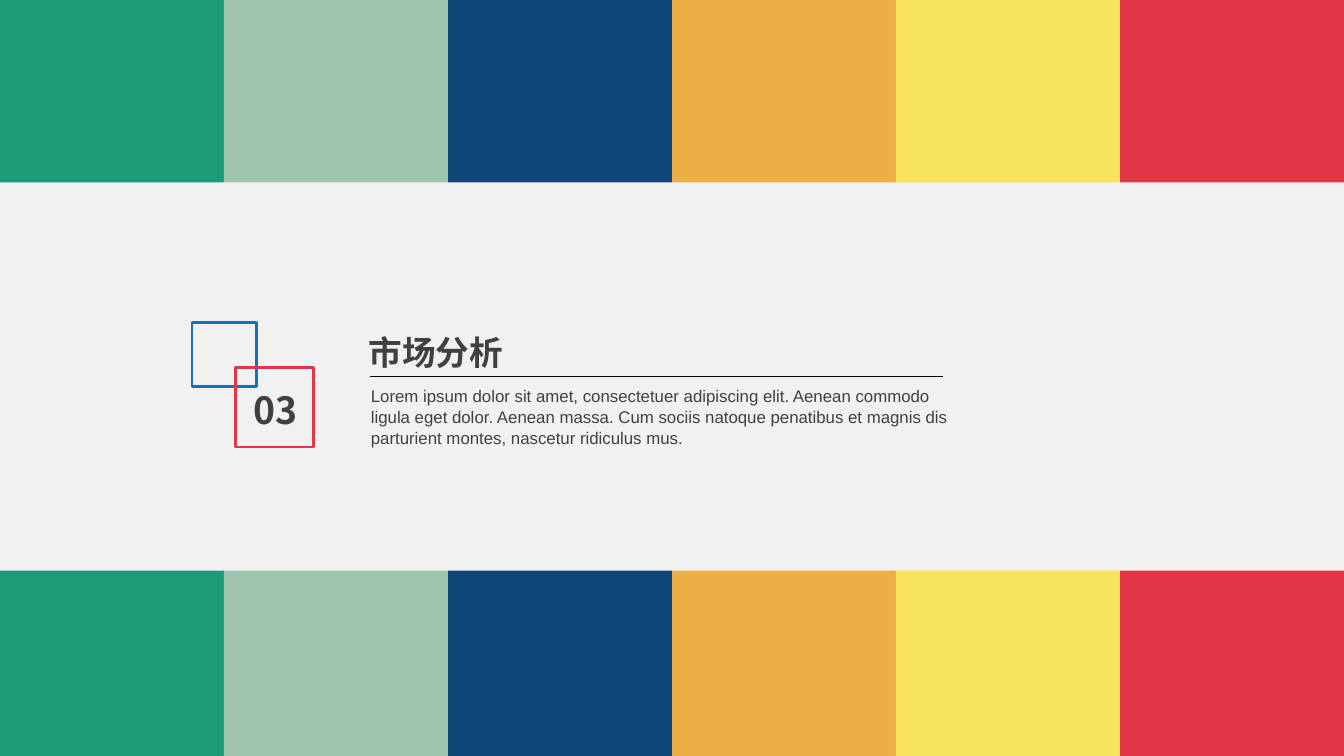
"""Build the section slide for part 03, market analysis."""
import pptx
import pptx.dml.color
import pptx.enum.shapes
import pptx.enum.text
import pptx.oxml.ns
import pptx.util
from lxml import etree

Cm = pptx.util.Cm
Pt = pptx.util.Pt

WIDTH, HEIGHT = 25.4, 14.29
STRIPES = ["1B9C77", "9CC4AE", "0D4677", "ECAF45", "F8E45E", "E03646"]
PAPER, INK = "F1F1F1", "404040"
BAND = (-0.08, 3.45, 25.48, 7.34)
FRAMES = [("1571BD", (3.63, 6.09, 1.22, 1.22)), ("E03646", (4.45, 6.95, 1.48, 1.5))]
RULE = (7.0, 7.11, 17.83)
HEADING = ("市场分析", (6.71, 6.15, 3.1, 1.02))
NUMBER = ("03", (4.55, 7.19, 1.4, 1.12))
BODY = (
    "Lorem ipsum dolor sit amet, consectetuer adipiscing elit. Aenean commodo "
    "ligula eget dolor. Aenean massa. Cum sociis natoque penatibus et magnis dis "
    "parturient montes, nascetur ridiculus mus.",
    (6.76, 7.16, 11.76, 1.42),
)


def color(value):
    return pptx.dml.color.RGBColor.from_string(value)


def lengths(place):
    return [Cm(value) for value in place]


def add_rectangle(page, place, fill=None, line=None):
    box = page.shapes.add_shape(pptx.enum.shapes.MSO_SHAPE.RECTANGLE, *lengths(place))
    box.shadow.inherit = False
    if fill:
        box.fill.solid()
        box.fill.fore_color.rgb = color(fill)
    else:
        box.fill.background()
    if line:
        box.line.color.rgb = color(line)
        box.line.width = Pt(1.5)
    else:
        box.line.fill.background()


def write(box, text, place, size, font, bold=False, wrap=False):
    box.left, box.top, box.width, box.height = lengths(place)
    frame = box.text_frame
    frame.text = text
    frame.word_wrap = wrap
    frame.auto_size = pptx.enum.text.MSO_AUTO_SIZE.NONE
    frame.vertical_anchor = pptx.enum.text.MSO_ANCHOR.MIDDLE
    para = frame.paragraphs[0]
    para.alignment = pptx.enum.text.PP_ALIGN.LEFT
    para.font.name = font
    para.font.size = Pt(size)
    para.font.bold = bold
    para.font.color.rgb = color(INK)
    span = para.runs[0]
    span.font.name = font
    east_asian = etree.SubElement(span.font._element, pptx.oxml.ns.qn("a:ea"))
    east_asian.set("typeface", font)
    return para


def add_rule(page, left, top, right):
    rule = page.shapes.add_connector(
        pptx.enum.shapes.MSO_CONNECTOR.STRAIGHT, *lengths((left, top, right, top))
    )
    rule.line.color.rgb = color("000000")
    rule.line.width = Pt(0.5)
    etree.SubElement(rule.element.spPr, pptx.oxml.ns.qn("a:effectLst"))


def main():
    deck = pptx.Presentation()
    deck.slide_width, deck.slide_height = Cm(WIDTH), Cm(HEIGHT)
    page = deck.slides.add_slide(deck.slide_layouts.get_by_name("Title Only"))
    page.background.fill.solid()
    page.background.fill.fore_color.rgb = color(PAPER)

    stripe_width = WIDTH / len(STRIPES)
    for index, fill in enumerate(STRIPES):
        add_rectangle(page, (index * stripe_width, 0, stripe_width, HEIGHT), fill=fill)
    add_rectangle(page, BAND, fill=PAPER)

    title = page.shapes.title
    title.element.getparent().append(title.element)
    write(title, *HEADING, 18, "Noto Sans CJK SC", bold=True)
    number = page.shapes.add_textbox(0, 0, 0, 0)
    write(number, *NUMBER, 20, "Noto Sans CJK SC", bold=True)
    body = page.shapes.add_textbox(0, 0, 0, 0)
    write(body, *BODY, 9, "Arial", wrap=True).line_spacing = 1.06

    add_rule(page, *RULE)
    for line, place in FRAMES:
        add_rectangle(page, place, line=line)
    deck.save("out.pptx")


if __name__ == "__main__":
    main()
